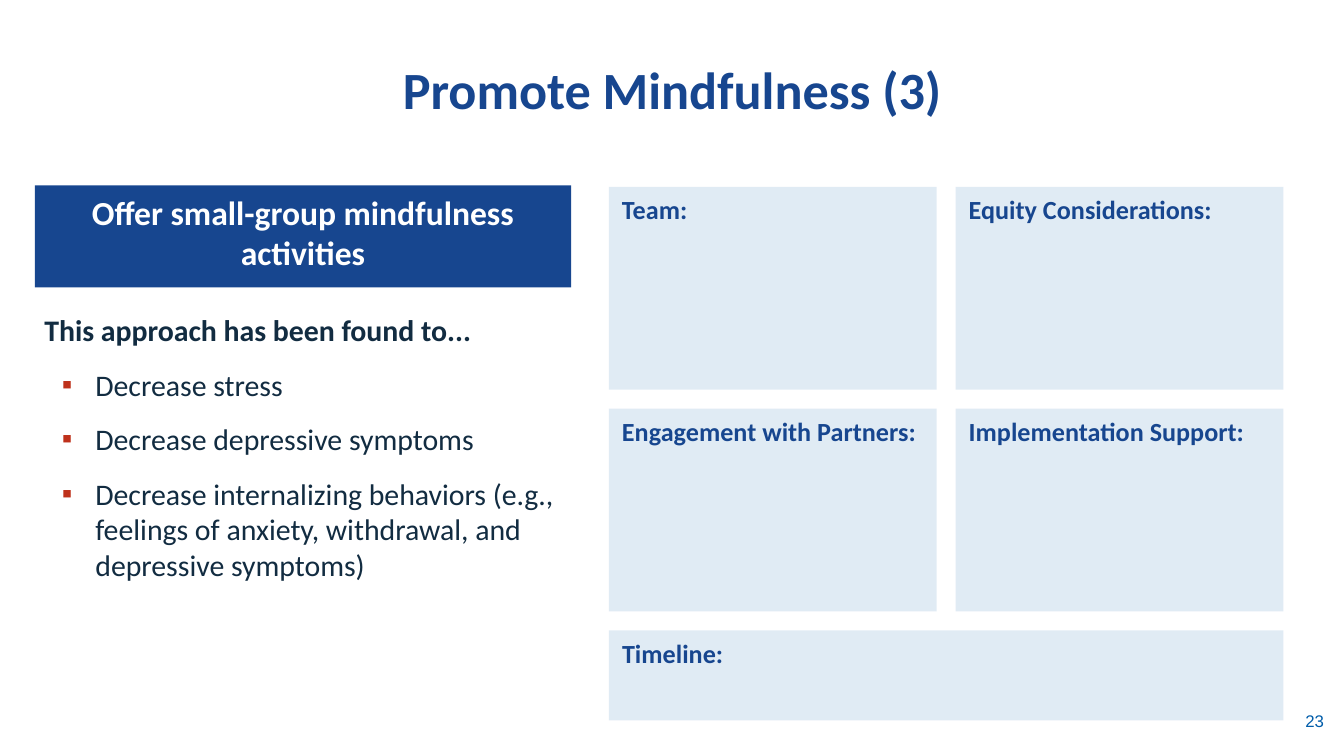
"""Build the mindfulness planning slide with a findings list and planning panels."""
from lxml.etree import SubElement
from pptx import Presentation
from pptx.dml.color import RGBColor
from pptx.enum.shapes import MSO_SHAPE
from pptx.enum.text import MSO_ANCHOR, PP_ALIGN
from pptx.oxml.ns import qn
from pptx.util import Inches, Pt

BLUE = RGBColor(0x17, 0x46, 0x8F)
PALE_BLUE = RGBColor(0x86, 0xB2, 0xD7)
NAVY = RGBColor(0x12, 0x2C, 0x41)
NUMBER_BLUE = RGBColor(0x01, 0x5D, 0xAA)
RED = RGBColor(0xBF, 0x31, 0x1B)
WHITE = RGBColor(0xFF, 0xFF, 0xFF)

TITLE = "Promote Mindfulness (3)"
ACTIVITY = "Offer small-group mindfulness activities"
LEAD = "This approach has been found to..."
FINDINGS = [
    "Decrease stress",
    "Decrease depressive symptoms",
    "Decrease internalizing behaviors (e.g., feelings of anxiety, withdrawal, "
    "and depressive symptoms)",
]
PANELS = [
    ("Team:", 0, 0, 1),
    ("Equity Considerations:", 1, 0, 1),
    ("Engagement with Partners:", 0, 1, 1),
    ("Implementation Support:", 1, 1, 1),
    ("Timeline:", 0, 2, 2),
]
PAGE_NUMBER = "23"

SLIDE_WIDTH = Inches(10)
SLIDE_HEIGHT = SLIDE_WIDTH * 9 // 16
LEFT_COLUMN, LEFT_WIDTH = 0.26, 3.99
GRID_LEFT, GRID_TOP = 4.53, 1.39
PANEL_WIDTH, GAP = 2.44, 0.14
ROW_HEIGHTS = [1.51, 1.51, 0.67]


def write(paragraph, text, size=14, color=BLUE, bold=True, font="Calibri",
          align=PP_ALIGN.LEFT, before=0, line=None, bullet=None):
    paragraph.alignment = align
    paragraph.space_before = Pt(before)
    if line:
        paragraph.line_spacing = Pt(line)
    if bullet:
        properties = paragraph._p.get_or_add_pPr()
        properties.set("marL", str(Inches(0.38)))
        properties.set("indent", str(Inches(-0.25)))
        bullet_color = SubElement(properties, qn("a:buClr"))
        SubElement(bullet_color, qn("a:srgbClr"), val=str(RED))
        SubElement(properties, qn("a:buFont"), typeface="Arial")
        SubElement(properties, qn("a:buChar"), char=bullet)
    run = paragraph.add_run()
    run.text = text
    run.font.size, run.font.name, run.font.bold = Pt(size), font, bold
    run.font.color.rgb = color


def add_box(slide, left, top, width, height, fill=None, opacity=100,
            anchor=MSO_ANCHOR.TOP):
    place = [Inches(value) for value in (left, top, width, height)]
    if fill is None:
        shape = slide.shapes.add_textbox(*place)
    else:
        shape = slide.shapes.add_shape(MSO_SHAPE.RECTANGLE, *place)
        shape.shadow.inherit = False
        shape.line.fill.background()
        shape.fill.solid()
        shape.fill.fore_color.rgb = fill
        if opacity < 100:
            color = shape.fill._xPr.find(".//" + qn("a:srgbClr"))
            SubElement(color, qn("a:alpha"), val=str(opacity * 1000))
    frame = shape.text_frame
    frame.word_wrap = True
    frame.vertical_anchor = anchor
    return frame


def main():
    presentation = Presentation()
    presentation.slide_width, presentation.slide_height = SLIDE_WIDTH, SLIDE_HEIGHT
    slide = presentation.slides.add_slide(presentation.slide_layouts[6])

    title = add_box(slide, 0.5, 0, 9, 0.94, anchor=MSO_ANCHOR.BOTTOM)
    write(title.paragraphs[0], TITLE, size=28, align=PP_ALIGN.CENTER, line=30)

    banner = add_box(slide, LEFT_COLUMN, 1.38, LEFT_WIDTH, 0.76, fill=BLUE)
    write(banner.paragraphs[0], ACTIVITY, size=18, color=WHITE, align=PP_ALIGN.CENTER)

    body = add_box(slide, LEFT_COLUMN, 2.28, LEFT_WIDTH, 3.2)
    body.margin_left = body.margin_right = Inches(0.07)
    body.margin_top = body.margin_bottom = Inches(0.04)
    write(body.paragraphs[0], LEAD, size=16, color=NAVY)
    for finding in FINDINGS:
        write(body.add_paragraph(), finding, size=16, color=NAVY, bold=False,
              before=10, bullet="▪")

    for label, column, row, span in PANELS:
        left = GRID_LEFT + column * (PANEL_WIDTH + GAP)
        top = GRID_TOP + sum(ROW_HEIGHTS[:row]) + row * GAP
        width = span * PANEL_WIDTH + (span - 1) * GAP
        panel = add_box(slide, left, top, width, ROW_HEIGHTS[row],
                        fill=PALE_BLUE, opacity=25)
        write(panel.paragraphs[0], label)

    number = add_box(slide, 9.09, 5.24, 0.86, 0.3)
    write(number.paragraphs[0], PAGE_NUMBER, size=9, color=NUMBER_BLUE, bold=False,
          font="Arial", align=PP_ALIGN.RIGHT)
    presentation.save("out.pptx")


if __name__ == "__main__":
    main()
